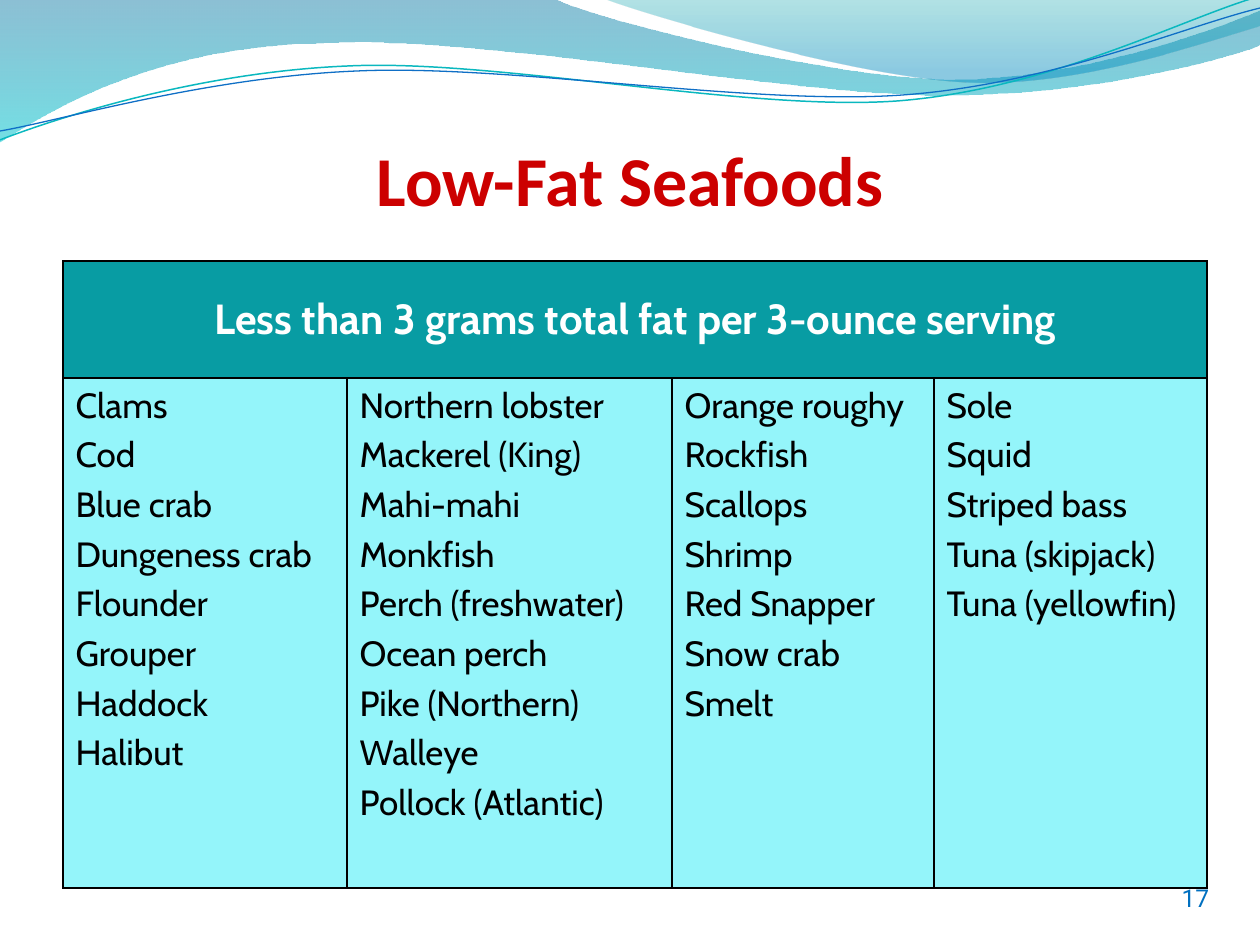
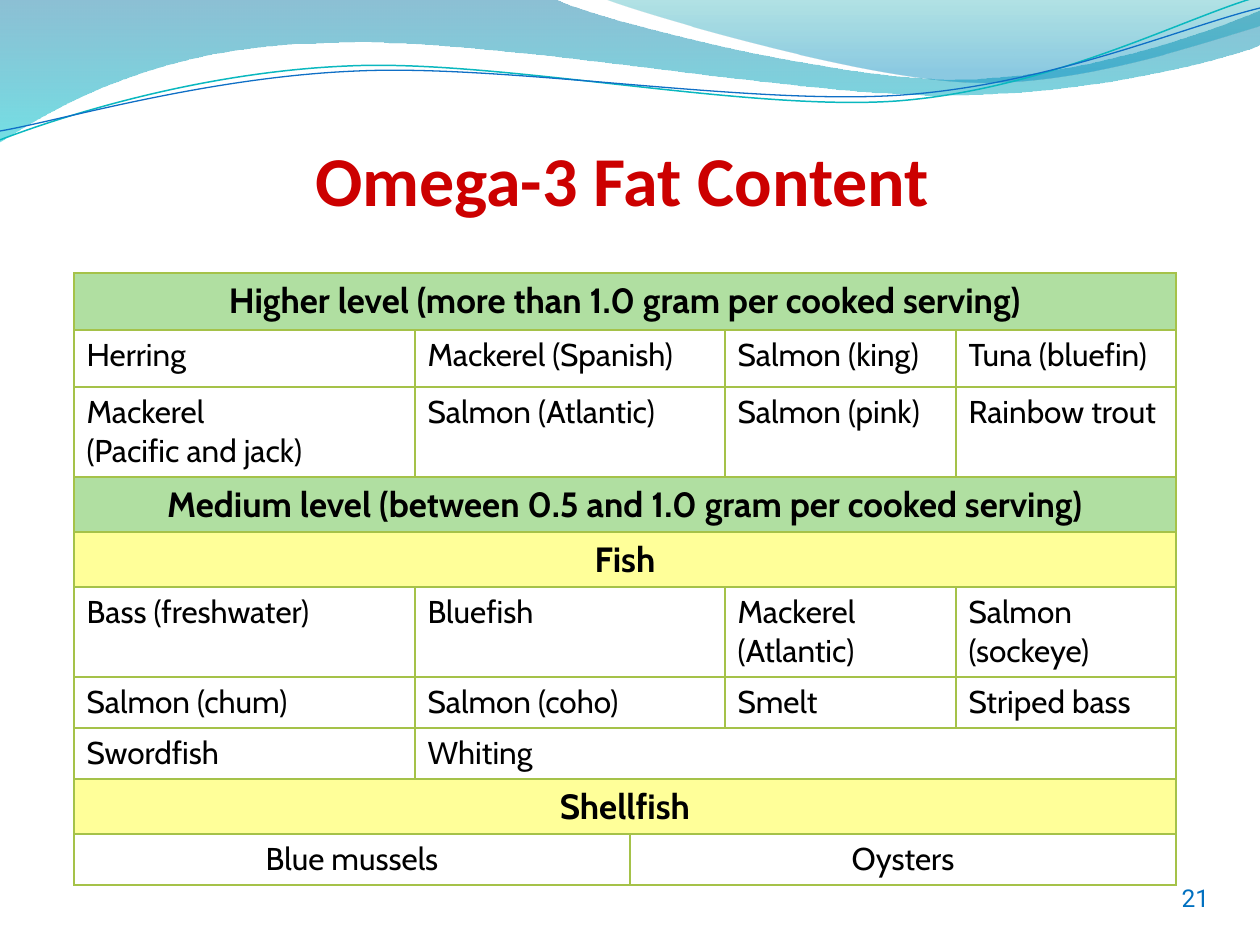
"""Build two seafood fat slides that share a wave header, title and page number."""
from math import cos, radians, sin

from pptx import Presentation
from pptx.dml.color import RGBColor as RGB
from pptx.enum.text import MSO_ANCHOR as Anchor, PP_ALIGN as Align
from pptx.oxml import parse_xml
from pptx.oxml.ns import nsdecls, qn
from pptx.util import Emu, Pt

COLORS = {
    "title": "CC0000", "page": "0070C0", "white": "FFFFFF", "black": "000000",
    "teal": "089CA3", "aqua": "94F5FA",
    "green": "B0DFA1", "yellow": "FFFF99", "rule": "A5C249",
    "sea": "0074A1", "cyan": "00C6CF", "mint": "00A1A9", "sky": "008BBF",
    "lineA": "0AB8BF", "lineB": "0F6FC6",
}
WIDE, HIGH = 1260, 945
TILT = 2.7

BANDS = [
    ([(0, 0), (554, -1), (600, 21, 837, 79, 955, 79), (1075, 79, 1207, 33, 1260, 11),
      (1261, 45), (1239, 55, 1096, 96, 940, 95), (784, 95, 481, 35, 324, 43),
      (163, 45, 58, 105, -1, 142)],
     [(0, "sea", 45), (100, "cyan", 55)]),
    ([(604, -1), (641, 14, 859, 78, 969, 82), (1079, 87, 1211, 40, 1260, 26), (1260, 0)],
     [(0, "mint", 30), (80, "sky", 45)]),
]
LINES = [
    ([(0, 140), (60, 117, 199, 72, 349, 66), (498, 59, 747, 112, 898, 101),
      (1050, 89, 1182, 19, 1257, -3)], (629, 72), "lineA", 0.85),
    ([(0, 131), (59, 121, 207, 77, 357, 71), (508, 64, 752, 106, 903, 95),
      (1053, 84, 1185, 26, 1260, 8)], (629, 74), "lineB", 0.75),
]

LOW_FAT = [
    "Clams\nCod\nBlue crab\nDungeness crab\nFlounder\nGrouper\nHaddock\nHalibut",
    "Northern lobster\nMackerel (King)\nMahi-mahi\nMonkfish\nPerch (freshwater)\n"
    "Ocean perch\nPike (Northern)\nWalleye\nPollock (Atlantic)",
    "Orange roughy\nRockfish\nScallops\nShrimp\nRed Snapper\nSnow crab\nSmelt",
    "Sole\nSquid\nStriped bass\nTuna (skipjack)\nTuna (yellowfin)",
]
FOUR = (1, 2, 1, 1)
OMEGA = [
    (57, "green", (5,), ["Higher level (more than 1.0 gram per cooked serving)"]),
    (57, None, FOUR, ["Herring", "Mackerel (Spanish)", "Salmon (king)", "Tuna (bluefin)"]),
    (90, None, FOUR, ["Mackerel\n(Pacific and jack)", "Salmon (Atlantic)",
                      "Salmon (pink)", "Rainbow trout"]),
    (55, "green", (5,), ["Medium level (between 0.5 and 1.0 gram per cooked serving)"]),
    (55, "yellow", (5,), ["Fish"]),
    (90, None, FOUR, ["Bass (freshwater)", "Bluefish", "Mackerel (Atlantic)",
                      "Salmon (sockeye)"]),
    (51, None, FOUR, ["Salmon (chum)", "Salmon (coho)", "Smelt", "Striped bass"]),
    (51, None, (1, 4), ["Swordfish", "Whiting"]),
    (55, "yellow", (5,), ["Shellfish"]),
    (51, None, (2, 3), ["Blue mussels", "Oysters"]),
]


def px(n):
    """Turn px into EMU."""
    return Emu(round(n * 914400 / 126))


def color(name):
    """Look up a colour by name."""
    return RGB.from_string(COLORS[name])


def write(frame, text, size, font, tint, bold=False, align=Align.LEFT, gap=0):
    """Write each line of text as a paragraph with one run."""
    for i, line in enumerate(text.split("\n")):
        para = frame.add_paragraph() if i else frame.paragraphs[0]
        para.alignment = align
        if i:
            para.space_before = Pt(gap)
        run = para.add_run()
        run.text = line
        run.font.size, run.font.name, run.font.bold = Pt(size), font, bold
        run.font.color.rgb = color(tint)


def label(slide, box, text, size, font, tint, bold=False, anchor=Anchor.MIDDLE):
    """Add a centred text box without side insets."""
    frame = slide.shapes.add_textbox(*map(px, box)).text_frame
    frame.word_wrap = True
    frame.vertical_anchor = anchor
    frame.margin_left = frame.margin_right = frame.margin_bottom = 0
    frame.margin_top = px(6) if anchor == Anchor.BOTTOM else 0
    write(frame, text, size, font, tint, bold, Align.CENTER)


def turn(step, mid):
    """Turn the points of a step clockwise about a centre."""
    c, s = cos(radians(TILT)), sin(radians(TILT))
    out = []
    for x, y in zip(step[::2], step[1::2]):
        dx, dy = x - mid[0], y - mid[1]
        out += [mid[0] + dx * c - dy * s, mid[1] + dx * s + dy * c]
    return out


def outline(slide, steps, close):
    """Add a bare freeform of straight steps and cubic curves."""
    pts = [(px(x), px(y)) for step in steps for x, y in zip(step[::2], step[1::2])]
    pen = slide.shapes.build_freeform(*pts[0], scale=1.0)
    pen.add_line_segments(pts[1:], close=close)
    shape = pen.convert_to_shape()
    shape.shadow.inherit = False
    shape.fill.background()
    legs = iter(list(shape._element.iter(qn("a:lnTo"))))
    for step in steps[1:]:
        leg = next(legs)
        if len(step) == 6:
            curve = parse_xml(f'<a:cubicBezTo {nsdecls("a")}/>')
            leg.getparent().replace(leg, curve)
            curve.append(leg[0])
            for _ in range(2):
                leg = next(legs)
                curve.append(leg[0])
                leg.getparent().remove(leg)
    return shape


def waves(slide):
    """Draw the header bands and thin lines."""
    for steps, stops in BANDS:
        shape = outline(slide, steps, True)
        shape.line.fill.background()
        marks = "".join(
            f'<a:gs pos="{pos * 1000}"><a:srgbClr val="{COLORS[name]}">'
            f'<a:alpha val="{alpha * 1000}"/></a:srgbClr></a:gs>'
            for pos, name, alpha in stops)
        props = shape._element.spPr
        props.replace(props.find(qn("a:noFill")), parse_xml(
            f'<a:gradFill {nsdecls("a")} rotWithShape="1"><a:gsLst>{marks}</a:gsLst>'
            '<a:lin ang="5400000" scaled="0"/></a:gradFill>'))
    for steps, mid, tint, width in LINES:
        shape = outline(slide, [turn(step, mid) for step in steps], False)
        shape.rotation = -TILT
        shape.line.color.rgb = color(tint)
        shape.line.width = Pt(width)


def border(cell, tint):
    """Rule all four sides of a cell."""
    for side in "LRTB":
        cell._tc.get_or_add_tcPr().append(parse_xml(
            f'<a:ln{side} {nsdecls("a")} w="12700"><a:solidFill>'
            f'<a:srgbClr val="{COLORS[tint]}"/></a:solidFill></a:ln{side}>'))


def grid(slide, left, top, cols, rows, rule):
    """Add a plain ruled table."""
    box = (left, top, sum(cols), sum(rows))
    table = slide.shapes.add_table(len(rows), len(cols), *map(px, box)).table
    table.first_row = table.horz_banding = False
    for col, width in zip(table.columns, cols):
        col.width = px(width)
    for row, height in zip(table.rows, rows):
        row.height = px(height)
    for cell in table.iter_cells():
        border(cell, rule)
        cell.fill.background()
    return table


def put(table, row, col, span, fill, text, size, tint="black", **style):
    """Fill one cell, merged over its span."""
    cell = table.cell(row, col)
    if span > 1:
        cell.merge(table.cell(row, col + span - 1))
    if fill:
        cell.fill.solid()
        cell.fill.fore_color.rgb = color(fill)
    write(cell.text_frame, text, size, "Cabin", tint, **style)
    return cell


def seafood(slide, left, top):
    """Place the low-fat table."""
    table = grid(slide, left, top, (284, 325, 262, 273), (117, 510), "black")
    head = put(table, 0, 0, 4, "teal", "Less than 3 grams total fat per 3-ounce serving",
               24, "white", bold=True, align=Align.CENTER)
    head.vertical_anchor = Anchor.MIDDLE
    for col, names in enumerate(LOW_FAT):
        put(table, 1, col, 1, "aqua", names, 20, gap=4)


def omega(slide, left, top):
    """Place the omega-3 table."""
    table = grid(slide, left, top, (341, 215, 95, 231, 220),
                 [row[0] for row in OMEGA], "rule")
    for r, (_, fill, spans, texts) in enumerate(OMEGA):
        mid = fill or spans == (2, 3)
        col = 0
        for span, text in zip(spans, texts):
            put(table, r, col, span, fill, text, 20 if fill else 18,
                bold=bool(fill), align=Align.CENTER if mid else Align.LEFT)
            col += span


def page(deck, title, number, body, left, top):
    """Add a slide with the shared frame and one table."""
    slide = deck.slides.add_slide(deck.slide_layouts[6])
    waves(slide)
    label(slide, (0, 0, WIDE, 220), title, 40, "Calibri", "title", True, Anchor.BOTTOM)
    body(slide, left, top)
    label(slide, (1134, 851, 123, 94), number, 14, "Roboto", "page")


def main():
    """Build and save the deck."""
    deck = Presentation()
    deck.slide_width, deck.slide_height = px(WIDE), px(HIGH)
    page(deck, "Low-Fat Seafoods", "17", seafood, 63, 261)
    page(deck, "Omega-3 Fat Content ", "21", omega, 74, 273)
    deck.save("out.pptx")


if __name__ == "__main__":
    main()
